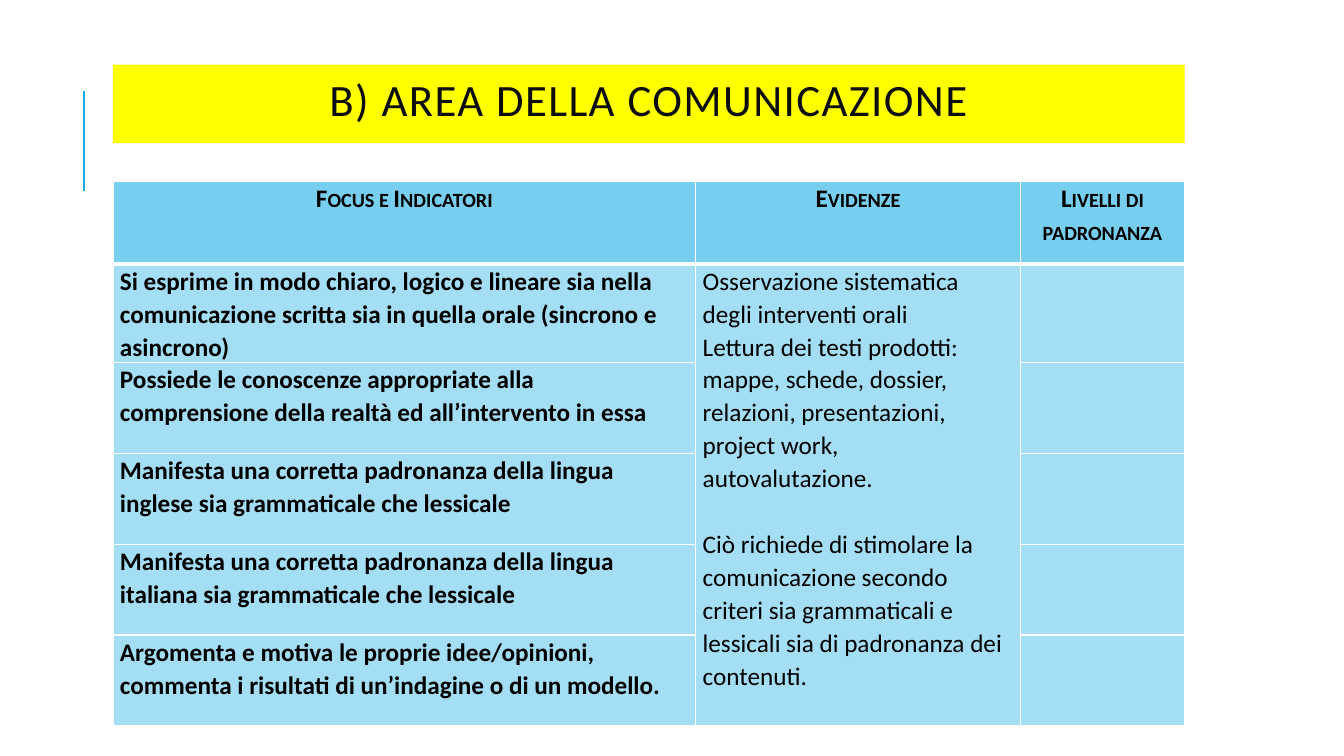
from dataclasses import dataclass

from lxml import etree
from pptx import Presentation
from pptx.dml.color import RGBColor
from pptx.enum.shapes import MSO_CONNECTOR
from pptx.enum.text import MSO_ANCHOR, MSO_AUTO_SIZE, PP_ALIGN
from pptx.oxml.ns import qn
from pptx.util import Inches, Pt

STRAIGHT = MSO_CONNECTOR.STRAIGHT
MIDDLE, TOP = MSO_ANCHOR.MIDDLE, MSO_ANCHOR.TOP
CENTER, LEFT = PP_ALIGN.CENTER, PP_ALIGN.LEFT
NO_AUTOFIT = MSO_AUTO_SIZE.NONE
TITLE_ONLY = 5


@dataclass(frozen=True)
class Theme:
    """Colours, type sizes and the font of the slide."""
    font: str = "Calibri"
    ink: str = "000000"
    title_ink: str = "0D0D0D"
    title_fill: str = "FFFF00"
    accent: str = "1CADE4"
    header_fill: str = "77CEEF"
    body_fill: str = "A4DEF4"
    border: str = "FFFFFF"
    title_size: float = 32
    body_size: float = 18
    body_leading: float = 1.07
    paragraph_gap: float = 23.5


THEME = Theme()
SLIDE_WIDTH, SLIDE_HEIGHT = 13.33, 7.5
CONTENT_LEFT = 1.12
COLUMNS = (5.78, 3.22, 1.63)
HEADER_ROW, BODY_ROW = 0.82, 0.9
TITLE_TOP, TITLE_HEIGHT = 0.64, 0.78
TABLE_TOP = 1.8

TITLE = "B) AREA DELLA COMUNICAZIONE"
HEADERS = ("Focus e Indicatori", "Evidenze", "Livelli di padronanza")
INDICATORS = (
    "Si esprime in modo chiaro, logico e lineare sia nella comunicazione "
    "scritta sia in quella orale (sincrono e asincrono)",
    "Possiede le conoscenze appropriate alla comprensione della realtà "
    "ed all’intervento in essa",
    "Manifesta una corretta padronanza della lingua inglese sia "
    "grammaticale che lessicale",
    "Manifesta una corretta padronanza della lingua italiana sia "
    "grammaticale che lessicale",
    "Argomenta e motiva le proprie idee/opinioni, commenta i risultati "
    "di un’indagine o di un modello.",
)
EVIDENCE = (
    "Osservazione sistematica degli interventi orali",
    "Lettura dei testi prodotti: mappe, schede, dossier, relazioni, "
    "presentazioni, project work, autovalutazione.",
)
REQUIREMENT = (
    "Ciò richiede di stimolare la comunicazione secondo criteri sia "
    "grammaticali e lessicali sia di padronanza dei contenuti."
)


def write(paragraph, text, *, size=THEME.body_size, color=THEME.ink, bold=False,
          align=LEFT, leading=THEME.body_leading, before=0, **run_attributes):
    """Write one formatted run into a paragraph."""
    paragraph.alignment = align
    paragraph.line_spacing = leading
    paragraph.space_before = Pt(before)
    run = paragraph.add_run()
    run.text = text
    run.font.name = THEME.font
    run.font.size = Pt(size)
    run.font.bold = bold
    run.font.color.rgb = RGBColor.from_string(color)
    for key, value in run_attributes.items():
        run.font._element.set(key, value)


def fill_solid(target, color):
    """Give a shape or a cell a plain fill."""
    target.fill.solid()
    target.fill.fore_color.rgb = RGBColor.from_string(color)


def style_cell(cell, fill, top=1, bottom=1):
    """Set the margins, fill and borders of a table cell."""
    cell.margin_left = cell.margin_right = Inches(0.07)
    cell.margin_top = cell.margin_bottom = 0
    cell.vertical_anchor = TOP
    fill_solid(cell, fill)
    properties = cell._tc.get_or_add_tcPr()
    widths = {"a:lnL": 1, "a:lnR": 1, "a:lnT": top, "a:lnB": bottom}
    for position, (side, width) in enumerate(widths.items()):
        border = etree.Element(qn(side), w=str(Pt(width)))
        paint = etree.SubElement(border, qn("a:solidFill"))
        etree.SubElement(paint, qn("a:srgbClr"), val=THEME.border)
        properties.insert(position, border)


def add_title(slide):
    """Place the title band."""
    title = slide.shapes.title
    title.left, title.top = Inches(CONTENT_LEFT), Inches(TITLE_TOP)
    title.width, title.height = Inches(sum(COLUMNS)), Inches(TITLE_HEIGHT)
    fill_solid(title, THEME.title_fill)
    frame = title.text_frame
    frame.word_wrap = True
    frame.auto_size = NO_AUTOFIT
    frame.vertical_anchor = MIDDLE
    write(frame.paragraphs[0], TITLE, size=THEME.title_size,
          color=THEME.title_ink, align=CENTER, leading=0.8, spc="100")


def add_accent_line(slide):
    """Draw the upright line beside the title."""
    x = Inches(SLIDE_WIDTH / 16)
    top, bottom = Inches(SLIDE_HEIGHT * 0.12), Inches(SLIDE_HEIGHT * 0.253)
    accent = slide.shapes.add_connector(STRAIGHT, x, bottom, x, top)
    accent.line.color.rgb = RGBColor.from_string(THEME.accent)
    accent.line.width = Pt(1.5)
    etree.SubElement(accent._element.spPr, qn("a:effectLst"))


def add_rubric(slide):
    """Build the table of indicators, evidence and levels."""
    row_heights = [HEADER_ROW] + [BODY_ROW] * len(INDICATORS)
    rubric = slide.shapes.add_table(
        len(row_heights), len(COLUMNS), Inches(CONTENT_LEFT), Inches(TABLE_TOP),
        Inches(sum(COLUMNS)), Inches(sum(row_heights))).table
    for column, width in zip(rubric.columns, COLUMNS):
        column.width = Inches(width)
    for index, (row, height) in enumerate(zip(rubric.rows, row_heights)):
        row.height = Inches(height)
        for cell in row.cells:
            if index == 0:
                style_cell(cell, THEME.header_fill, bottom=3)
            else:
                style_cell(cell, THEME.body_fill, top=3 if index == 1 else 1)
    for column, header in enumerate(HEADERS):
        write(rubric.cell(0, column).text_frame.paragraphs[0], header,
              bold=True, align=CENTER, cap="small")
    for row, indicator in enumerate(INDICATORS, start=1):
        write(rubric.cell(row, 0).text_frame.paragraphs[0], indicator, bold=True)
    evidence = rubric.cell(1, 1)
    evidence.merge(rubric.cell(len(INDICATORS), 1))
    frame = evidence.text_frame
    write(frame.paragraphs[0], EVIDENCE[0])
    write(frame.add_paragraph(), EVIDENCE[1])
    write(frame.add_paragraph(), REQUIREMENT, before=THEME.paragraph_gap)


def main():
    """Build and save the slide."""
    deck = Presentation()
    deck.slide_width, deck.slide_height = Inches(SLIDE_WIDTH), Inches(SLIDE_HEIGHT)
    slide = deck.slides.add_slide(deck.slide_layouts[TITLE_ONLY])
    add_accent_line(slide)
    add_title(slide)
    add_rubric(slide)
    deck.save("out.pptx")


if __name__ == "__main__":
    main()
